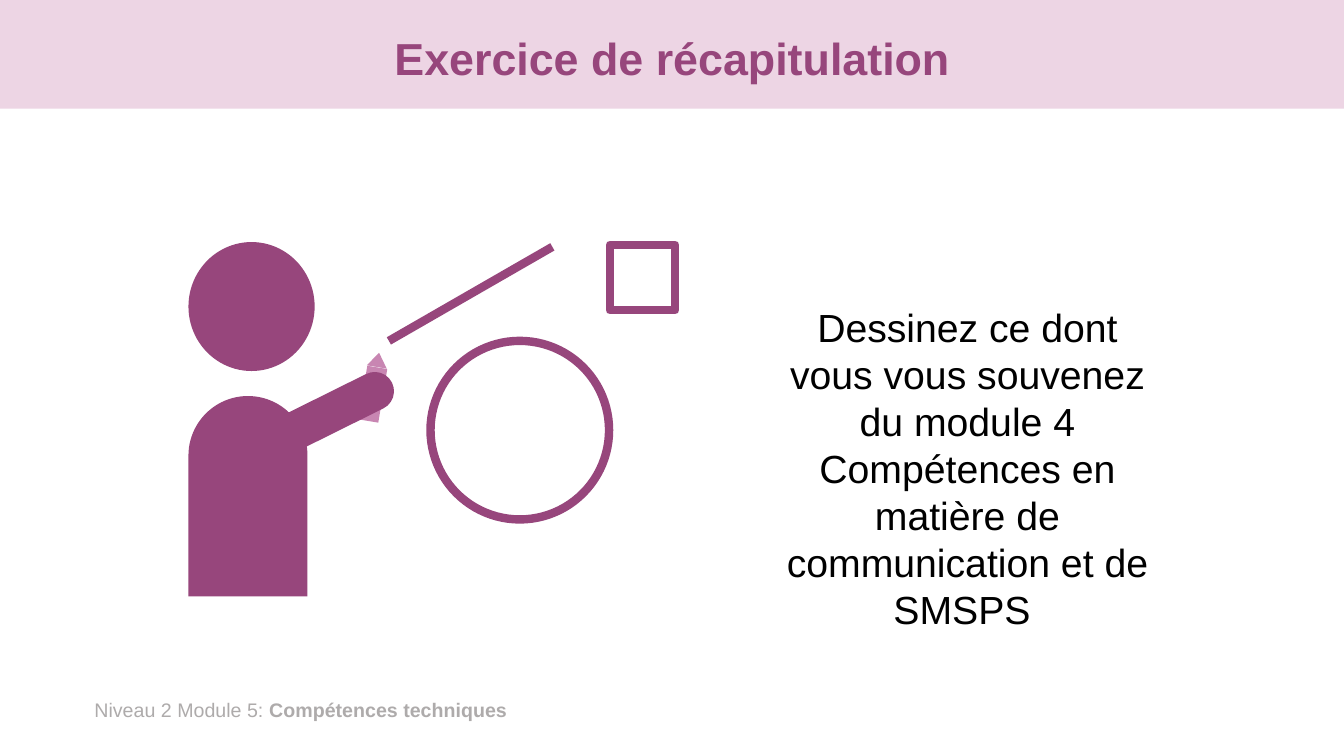
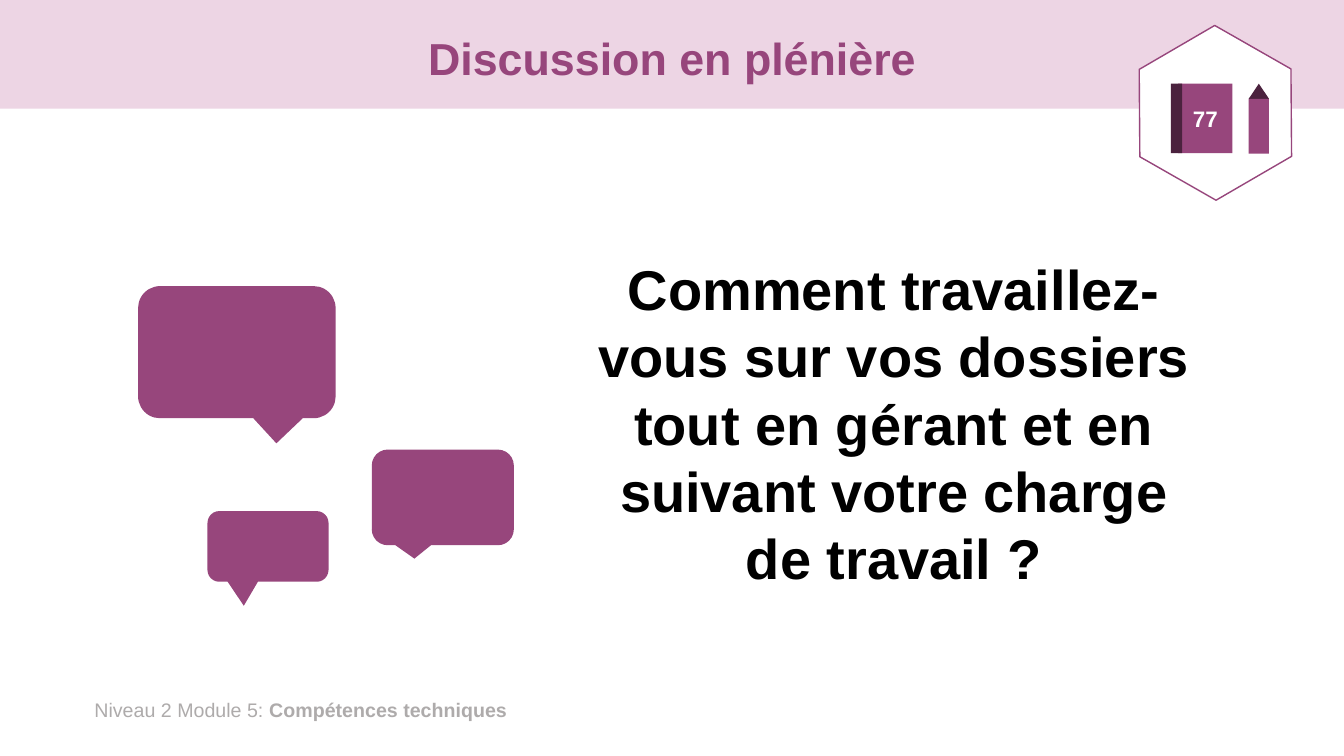
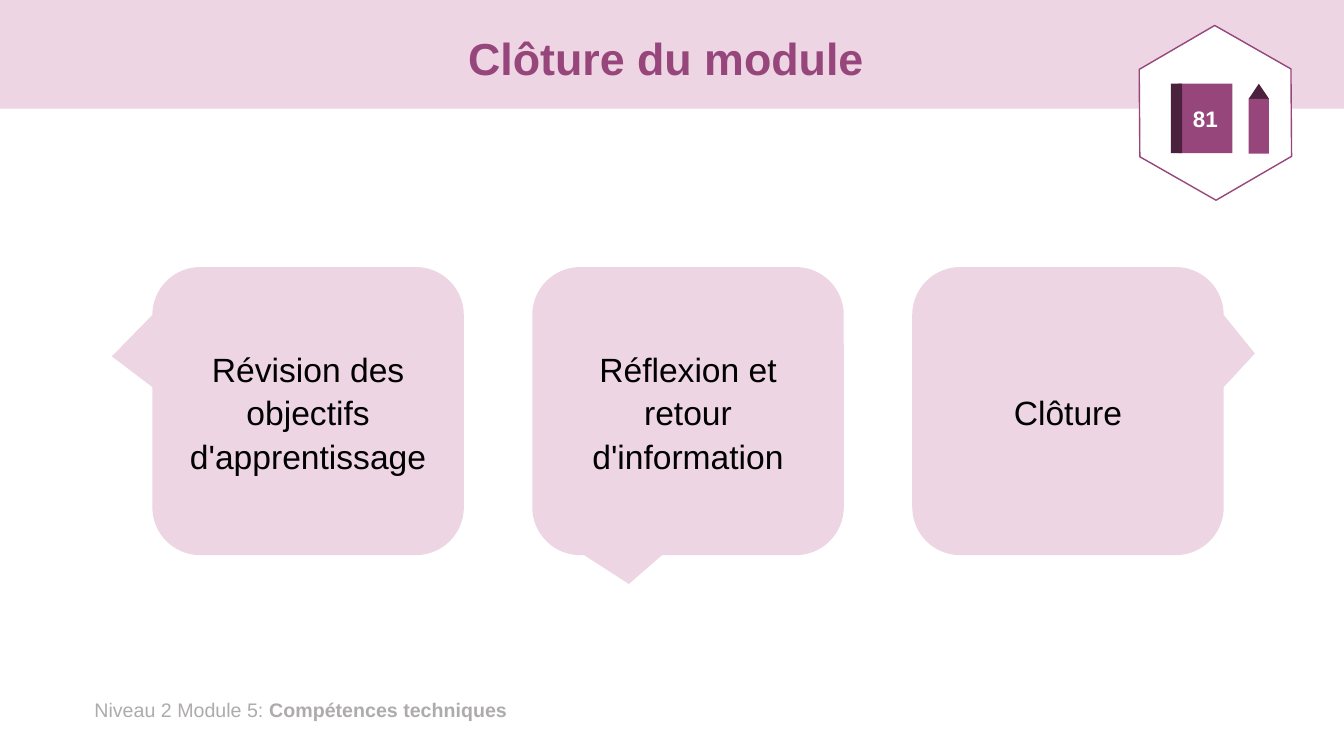
from dataclasses import dataclass

from lxml import etree
from pptx import Presentation
from pptx.dml.color import RGBColor
from pptx.enum.shapes import MSO_CONNECTOR, MSO_SHAPE
from pptx.enum.text import MSO_ANCHOR, PP_ALIGN
from pptx.oxml.ns import qn
from pptx.util import Cm, Pt

RECTANGLE = MSO_SHAPE.RECTANGLE
OVAL = MSO_SHAPE.OVAL
TRIANGLE = MSO_SHAPE.ISOSCELES_TRIANGLE
HEXAGON = MSO_SHAPE.HEXAGON
ROUND_TOP = MSO_SHAPE.ROUND_2_SAME_RECTANGLE
CALLOUT = MSO_SHAPE.ROUNDED_RECTANGULAR_CALLOUT
STRAIGHT = MSO_CONNECTOR.STRAIGHT
LEFT, CENTER = PP_ALIGN.LEFT, PP_ALIGN.CENTER
TOP, MIDDLE = MSO_ANCHOR.TOP, MSO_ANCHOR.MIDDLE

FONT = "Arial"
COLORS = {
    "plum": "97467C",
    "dark": "4B223E",
    "pink": "EDD5E4",
    "mauve": "C886B2",
    "grey": "AEABAB",
    "black": "000000",
    "white": "FFFFFF",
}


@dataclass
class Box:
    left: float
    top: float
    width: float
    height: float

    def inner(self, left, top, width, height):
        return Box(self.left + left, self.top + top, width, height)

    def lengths(self):
        return Cm(self.left), Cm(self.top), Cm(self.width), Cm(self.height)


SLIDE = Box(0, 0, 33.87, 19.05)
BADGE = Box(28.42, 0.94, 4.42, 3.81)


def color(name):
    return RGBColor.from_string(COLORS[name])


def write(shape, runs, size, text_color, align=CENTER, anchor=MIDDLE, spacing=1.0):
    frame = shape.text_frame
    frame.word_wrap = True
    frame.vertical_anchor = anchor
    paragraph = frame.paragraphs[0]
    paragraph.alignment = align
    paragraph.line_spacing = spacing
    for text, bold in runs:
        run = paragraph.add_run()
        run.text = text
        run.font.name = FONT
        run.font.size = Pt(size)
        run.font.bold = bold
        run.font.color.rgb = color(text_color)


def add_text(shapes, box, runs, size, text_color, **style):
    write(shapes.add_textbox(*box.lengths()), runs, size, text_color, **style)


def add_shape(shapes, kind, box, fill=None, line=None, weight=1, rotation=0, adjust=()):
    shape = shapes.add_shape(kind, *box.lengths())
    shape.shadow.inherit = False
    shape.rotation = rotation
    for index, value in enumerate(adjust):
        shape.adjustments[index] = value
    if fill:
        shape.fill.solid()
        shape.fill.fore_color.rgb = color(fill)
    else:
        shape.fill.background()
    if line:
        shape.line.color.rgb = color(line)
        shape.line.width = Pt(weight)
    else:
        shape.line.fill.background()
    return shape


def add_line(shapes, start, end, line, weight):
    connector = shapes.add_connector(STRAIGHT, *map(Cm, start + end))
    connector.line.color.rgb = color(line)
    connector.line.width = Pt(weight)
    etree.SubElement(connector.element.spPr, qn("a:effectLst"))


def add_base_slide(presentation, title):
    slide = presentation.slides.add_slide(presentation.slide_layouts[6])
    shapes = slide.shapes
    add_shape(shapes, RECTANGLE, SLIDE.inner(0, 0, SLIDE.width, 2.74), "pink")
    footer = [("Niveau 2 Module 5: ", False), ("Compétences techniques", True)]
    add_text(shapes, SLIDE.inner(2.13, 17.45, 11.56, 0.86), footer, 14, "grey",
             align=LEFT, anchor=TOP)
    add_text(shapes, SLIDE.inner(2.34, 0.33, 29.21, 2.41), [(title, True)], 32, "plum",
             spacing=0.9)
    return slide


def draw_badge(slide, box, page):
    shapes = slide.shapes.add_group_shape().shapes
    add_shape(shapes, HEXAGON, box, "white", "plum", rotation=29.7, adjust=[0.29])
    book = add_shape(shapes, RECTANGLE, box.inner(1.27, 1.17, 1.37, 1.75), "plum")
    write(book, [(page, True)], 16, "white")
    add_shape(shapes, RECTANGLE, box.inner(1.09, 1.17, 0.28, 1.75), "dark")
    add_shape(shapes, TRIANGLE, box.inner(3.05, 1.17, 0.51, 0.38), "dark")
    add_shape(shapes, RECTANGLE, box.inner(3.05, 1.55, 0.51, 1.38), "plum")


def draw_figures(slide, box):
    shapes = slide.shapes
    add_line(shapes, (box.left, box.top + 2.42), (box.left + 4.12, box.top + 0.05), "plum", 6)
    add_shape(shapes, OVAL, box.inner(1.05, 2.42, 4.5, 4.5), line="plum", weight=6)
    add_shape(shapes, RECTANGLE, box.inner(5.57, 0, 1.65, 1.65), line="plum", weight=6)


def draw_person(slide, box):
    shapes = slide.shapes.add_group_shape().shapes
    add_shape(shapes, TRIANGLE, box.inner(4.52, 2.79, 0.51, 0.36), "mauve", rotation=9.5)
    add_shape(shapes, RECTANGLE, box.inner(4.39, 3.15, 0.51, 1.37), "mauve", rotation=9.5)
    add_shape(shapes, OVAL, box.inner(0, 0, 3.18, 3.25), "plum")
    add_shape(shapes, ROUND_TOP, box.inner(0, 3.88, 3, 5.05), "plum", adjust=[0.5, 0])
    add_shape(shapes, ROUND_TOP, box.inner(3.3, 2.71, 0.97, 3), "plum",
              rotation=63.6, adjust=[0.5, 0.23])


def draw_bubbles(slide, box):
    shapes = slide.shapes.add_group_shape().shapes
    bubbles = [
        (box.inner(0, 0, 4.98, 3.33), [0.2, 0.69]),
        (box.inner(5.89, 4.12, 3.58, 2.41), [-0.2, 0.64]),
        (box.inner(1.75, 5.67, 3.05, 1.78), [-0.2, 0.84]),
    ]
    for bubble, tail in bubbles:
        add_shape(shapes, CALLOUT, bubble, "plum", adjust=tail)


def draw_steps(slide, box, steps):
    width = 7.85
    pitch = (box.width - width) / (len(steps) - 1)
    for index, (text, tail) in enumerate(steps):
        card = box.inner(index * pitch, 0, width, box.height)
        step = add_shape(slide.shapes, CALLOUT, card, "pink", adjust=tail)
        write(step, [(text, False)], 24, "black", spacing=1.07)


def build_recap(presentation):
    slide = add_base_slide(presentation, "Exercice de récapitulation")
    draw_figures(slide, Box(9.8, 6.17, 7.22, 6.92))
    prompt = ("Dessinez ce dont vous vous souvenez du module 4 "
              "Compétences en matière de communication et de SMSPS ")
    add_text(slide.shapes, Box(19.25, 7.52, 10.26, 8.64), [(prompt, False)], 28, "black",
             anchor=TOP)
    draw_person(slide, Box(4.75, 6.1, 5.2, 8.93))


def build_discussion(presentation):
    slide = add_base_slide(presentation, "Discussion en plénière")
    question = ("Comment travaillez-vous sur vos dossiers tout en gérant "
                "et en suivant votre charge de travail ?")
    add_text(slide.shapes, Box(14.66, 5.99, 15.72, 9.32), [(question, True)], 40, "black")
    draw_bubbles(slide, Box(3.48, 7.21, 9.47, 7.45))
    draw_badge(slide, BADGE, "77")


def build_closing(presentation):
    slide = add_base_slide(presentation, "Clôture du module ")
    draw_steps(slide, Box(3.84, 6.73, 27, 7.26), [
        ("Révision des objectifs d'apprentissage", [-0.63, -0.19]),
        ("Réflexion et retour d'information", [-0.19, 0.6]),
        ("Clôture", [0.6, -0.2]),
    ])
    draw_badge(slide, BADGE, "81")


def main():
    presentation = Presentation()
    presentation.slide_width = Cm(SLIDE.width)
    presentation.slide_height = Cm(SLIDE.height)
    build_recap(presentation)
    build_discussion(presentation)
    build_closing(presentation)
    presentation.save("out.pptx")


if __name__ == "__main__":
    main()
